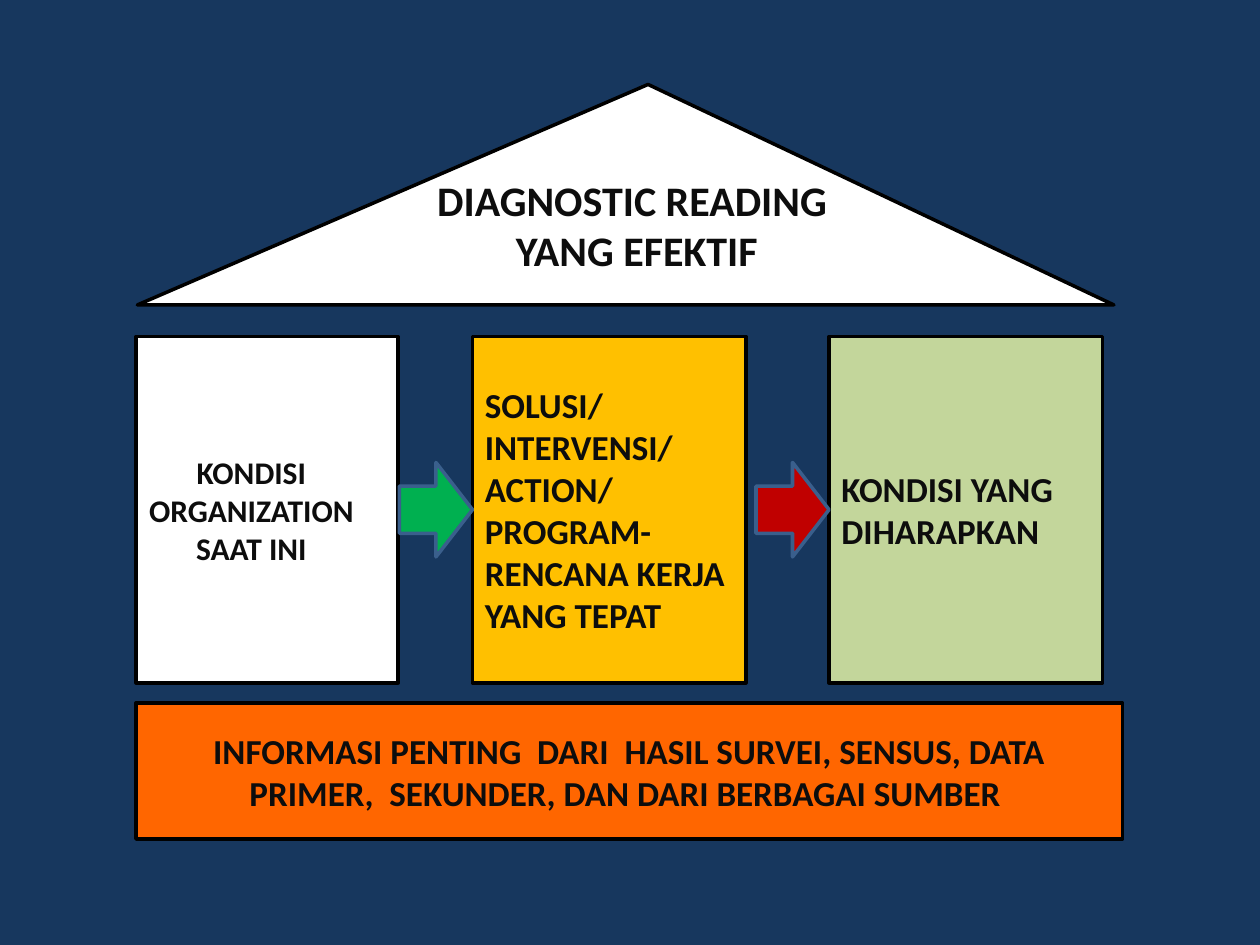
from pptx import Presentation
from pptx.dml.color import RGBColor
from pptx.enum.shapes import MSO_SHAPE
from pptx.enum.text import MSO_ANCHOR, PP_ALIGN
from pptx.util import Inches, Pt

TRIANGLE = MSO_SHAPE.ISOSCELES_TRIANGLE
RECTANGLE = MSO_SHAPE.RECTANGLE
ARROW = MSO_SHAPE.RIGHT_ARROW
MIDDLE = MSO_ANCHOR.MIDDLE
LEFT, CENTER = PP_ALIGN.LEFT, PP_ALIGN.CENTER

FONT = "Calibri"
COLORS = {
    "background": "17375E",
    "white": "FFFFFF",
    "amber": "FFC000",
    "sage": "C3D69B",
    "orange": "FF6600",
    "green": "00B050",
    "red": "C00000",
    "outline": "000000",
    "arrow_outline": "3A5F8C",
    "text": "0D0D0D",
}


def color(name):
    return RGBColor.from_string(COLORS[name])


def add_block(page, kind, box, fill, outline="outline"):
    shape = page.shapes.add_shape(kind, *(Inches(length) for length in box))
    shape.shadow.inherit = False
    shape.fill.solid()
    shape.fill.fore_color.rgb = color(fill)
    shape.line.color.rgb = color(outline)
    shape.line.width = Pt(2)
    return shape


def write_text(shape, text, size=20, align=LEFT, left=0.1, right=0.1, bottom=0.05):
    """Write one bold paragraph for each line of text."""
    frame = shape.text_frame
    frame.word_wrap = True
    frame.vertical_anchor = MIDDLE
    frame.margin_left = Inches(left)
    frame.margin_right = Inches(right)
    frame.margin_bottom = Inches(bottom)
    frame.text = text
    for para in frame.paragraphs:
        para.alignment = align
        for span in para.runs:
            span.font.name = FONT
            span.font.size = Pt(size)
            span.font.bold = True
            span.font.color.rgb = color("text")


def add_roof(page, box):
    roof = add_block(page, TRIANGLE, box, "white")
    roof.adjustments[0] = 0.523
    # The deep bottom margin lifts the title off the base
    write_text(roof, "DIAGNOSTIC READING \nYANG EFEKTIF", size=24, align=CENTER, bottom=0.45)


def add_pillars(page, box):
    left, top, width, height = box
    arrow_width, arrow_height = 0.58, 0.75
    arrow_top = top + 1
    wide = 2.17
    current_width = 2.08
    solution_left = left + 2.67
    expected_left = left + width - wide

    # Three pillars
    current = add_block(page, RECTANGLE, (left, top, current_width, height), "white")
    write_text(current, "KONDISI ORGANIZATION\nSAAT INI", size=18, align=CENTER,
               left=0.05, right=0.3)
    solution = add_block(page, RECTANGLE, (solution_left, top, wide, height), "amber")
    write_text(solution, "SOLUSI/INTERVENSI/ACTION/ PROGRAM-RENCANA KERJA YANG TEPAT")
    expected = add_block(page, RECTANGLE, (expected_left, top, wide, height), "sage")
    write_text(expected, "KONDISI YANG DIHARAPKAN")

    # Each arrow ends at the pillar it points to
    for target, fill in ((solution_left, "green"), (expected_left, "red")):
        add_block(page, ARROW, (target - arrow_width, arrow_top, arrow_width, arrow_height),
                  fill, outline="arrow_outline")


def add_foundation(page, box):
    foundation = add_block(page, RECTANGLE, box, "orange")
    write_text(foundation, "INFORMASI PENTING  DARI  HASIL SURVEI, SENSUS, DATA PRIMER,  "
               "SEKUNDER, DAN DARI BERBAGAI SUMBER ", align=CENTER)


def main():
    deck = Presentation()
    deck.slide_width, deck.slide_height = Inches(10), Inches(7.5)
    page = deck.slides.add_slide(deck.slide_layouts[6])
    page.background.fill.solid()
    page.background.fill.fore_color.rgb = color("background")

    add_roof(page, (1.09, 0.67, 7.75, 1.75))
    add_pillars(page, (1.08, 2.67, 7.67, 2.75))
    add_foundation(page, (1.08, 5.58, 7.83, 1.08))
    deck.save("out.pptx")


if __name__ == "__main__":
    main()
